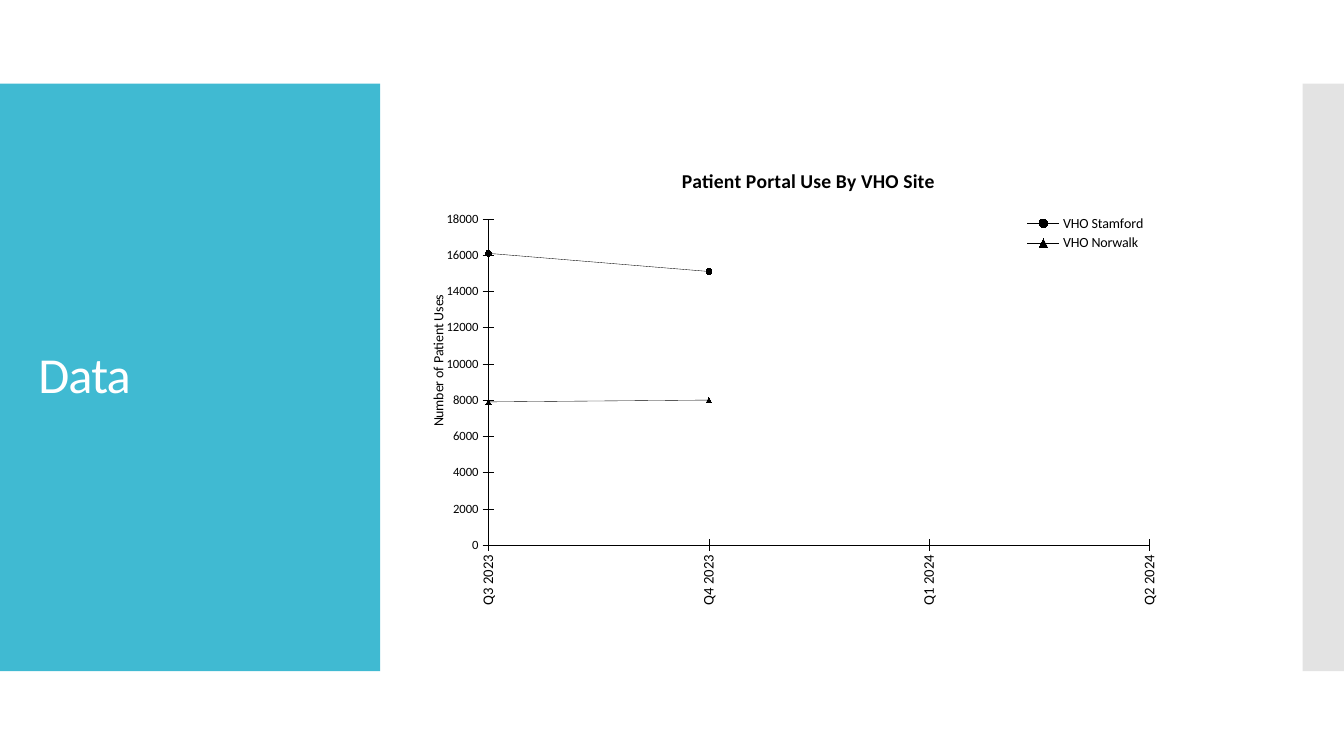
"""Build the patient portal data slide."""
from dataclasses import dataclass

from lxml.etree import SubElement
from pptx import Presentation
from pptx.chart.axis import CategoryAxis, ValueAxis
from pptx.chart.chart import Chart
from pptx.chart.data import CategoryChartData
from pptx.chart.series import LineSeries
from pptx.dml.color import RGBColor
from pptx.dml.line import LineFormat
from pptx.enum.chart import XL_CHART_TYPE, XL_LEGEND_POSITION, XL_MARKER_STYLE, XL_TICK_MARK
from pptx.enum.shapes import MSO_SHAPE
from pptx.enum.text import MSO_ANCHOR, PP_ALIGN
from pptx.oxml import parse_xml
from pptx.oxml.ns import nsdecls, qn
from pptx.oxml.xmlchemy import BaseOxmlElement
from pptx.slide import Slide
from pptx.text.text import Font
from pptx.util import Inches, Pt

FONT = "Calibri"
COLORS = {"panel": "40BAD2", "strip": "C8C8C8", "ink": "000000", "paper": "FFFFFF"}
QUARTERS = ("Q3 2023", "Q4 2023", "Q1 2024", "Q2 2024")


@dataclass(frozen=True)
class Band:
    """A colour band at the side of the slide."""
    left: float
    width: float
    color: str
    opacity: int = 100


@dataclass(frozen=True)
class Site:
    """One health centre and its quarterly uses."""
    name: str
    uses: tuple[int | None, ...]
    marker: XL_MARKER_STYLE


BANDS = (Band(0, 3.77, "panel"), Band(12.92, 0.42, "strip", 50))
SITES = (
    Site("VHO Stamford", (16100, 15100, None, None), XL_MARKER_STYLE.CIRCLE),
    Site("VHO Norwalk", (7900, 8000, None, None), XL_MARKER_STYLE.TRIANGLE),
)


def rgb(name: str) -> RGBColor:
    """Look up a named colour."""
    return RGBColor.from_string(COLORS[name])


def style_font(font: Font, size: float, color: str = "ink", bold: bool = False) -> None:
    """Apply the slide's typeface."""
    font.name, font.size, font.bold = FONT, Pt(size), bold
    font.color.rgb = rgb(color)


def style_line(line: LineFormat) -> None:
    """Apply the chart's hairline."""
    line.color.rgb = rgb("ink")
    line.width = Pt(0.25)


def place(part: BaseOxmlElement, index: int, target: str = "", **percents: float) -> None:
    """Give a chart part a manual layout in percent of the chart."""
    for old in part.findall(qn("c:layout")):
        part.remove(old)
    layout = parse_xml(f"<c:layout {nsdecls('c')}><c:manualLayout/></c:layout>")
    if target:
        SubElement(layout[0], qn("c:layoutTarget"), val=target)
    for mode in ("xMode", "yMode"):
        SubElement(layout[0], qn(f"c:{mode}"), val="edge")
    for tag, percent in percents.items():
        SubElement(layout[0], qn(f"c:{tag}"), val=f"{percent / 100:.3f}")
    part.insert(index, layout)


def add_band(slide: Slide, band: Band) -> None:
    """Draw one side band."""
    shape = slide.shapes.add_shape(
        MSO_SHAPE.RECTANGLE, Inches(band.left), Inches(0.83), Inches(band.width), Inches(5.83))
    shape.shadow.inherit = False
    shape.line.fill.background()
    shape.fill.solid()
    shape.fill.fore_color.rgb = rgb(band.color)
    if band.opacity < 100:
        tint = shape.element.find(".//" + qn("a:srgbClr"))
        SubElement(tint, qn("a:alpha"), val=str(band.opacity * 1000))


def format_title(slide: Slide) -> None:
    """Set the heading on the left panel."""
    heading = slide.shapes.title
    heading.left, heading.top = Inches(0.28), Inches(1.23)
    heading.width, heading.height = Inches(3.22), Inches(5.03)
    heading.text_frame.text = "Data"
    heading.text_frame.word_wrap = True
    heading.text_frame.vertical_anchor = MSO_ANCHOR.MIDDLE
    paragraph = heading.text_frame.paragraphs[0]
    paragraph.alignment = PP_ALIGN.LEFT
    paragraph.line_spacing = 0.9
    style_font(paragraph.runs[0].font, 36, "paper")
    paragraph.runs[0].font._element.set("spc", "-60")
    heading.element.getparent().append(heading.element)


def format_axis(axis: CategoryAxis | ValueAxis, size: float) -> None:
    """Apply the settings that both axes share."""
    axis.has_major_gridlines = False
    axis.major_tick_mark = XL_TICK_MARK.CROSS
    axis.minor_tick_mark = XL_TICK_MARK.NONE
    style_font(axis.tick_labels.font, size)
    style_line(axis.format.line)


def format_axes(chart: Chart) -> None:
    """Set quarters upright and uses from zero to 18000."""
    quarters, uses = chart.category_axis, chart.value_axis
    format_axis(quarters, 10.5)
    format_axis(uses, 9)
    body = quarters._element.find(qn("c:txPr")).find(qn("a:bodyPr"))
    body.set("rot", "-5400000")
    body.set("vert", "horz")
    uses.minimum_scale, uses.maximum_scale, uses.major_unit = 0, 18000, 2000
    uses.tick_labels.number_format = "0"
    uses.tick_labels.number_format_is_linked = False
    for crossing in uses._element.findall(qn("c:crossBetween")):
        uses._element.remove(crossing)
    uses._element.find(qn("c:crosses")).addnext(
        parse_xml(f'<c:crossBetween {nsdecls("c")} val="midCat"/>'))
    caption = uses.axis_title
    caption.text_frame.text = "Number of Patient Uses"
    style_font(caption.text_frame.paragraphs[0].runs[0].font, 10)
    place(caption.element, 1, x=0, y=31.5)


def format_series(series: LineSeries, site: Site) -> None:
    """Style the line and markers of one site."""
    series.smooth = False
    style_line(series.format.line)
    series.marker.style, series.marker.size = site.marker, 4
    series.marker.format.fill.solid()
    series.marker.format.fill.fore_color.rgb = rgb("ink")
    style_line(series.marker.format.line)


def add_usage_chart(slide: Slide) -> None:
    """Add the chart of portal use by site."""
    data = CategoryChartData(number_format="0")
    data.categories = QUARTERS
    for site in SITES:
        data.add_series(site.name, site.uses)
    chart = slide.shapes.add_chart(
        XL_CHART_TYPE.LINE_MARKERS, Inches(4.23), Inches(1.46), Inches(7.41), Inches(4.57), data).chart
    style_font(chart.font, 9)
    chart.plots[0].vary_by_categories = False
    for series, site in zip(chart.plots[0].series, SITES):
        format_series(series, site)
    format_axes(chart)

    chart.has_title = True
    chart.chart_title.text_frame.text = "Patient Portal Use By VHO Site"
    style_font(chart.chart_title.text_frame.paragraphs[0].runs[0].font, 14, bold=True)
    place(chart.chart_title.element, 1, x=33.7, y=3.5)

    chart.has_legend = True
    chart.legend.position = XL_LEGEND_POSITION.RIGHT
    chart.legend.include_in_layout = False
    style_font(chart.legend.font, 10)
    place(chart.legend._element, 1, x=79.7, y=14, w=17, h=9.4)

    graph = chart._chartSpace.find(qn("c:chart"))
    place(graph.find(qn("c:plotArea")), 0, "inner", x=8.3, y=15.6, w=88.5, h=70.8)
    graph.addnext(parse_xml(
        f'<c:spPr {nsdecls("c", "a")}><a:solidFill><a:srgbClr val="{COLORS["paper"]}"/>'
        "</a:solidFill><a:ln><a:noFill/></a:ln></c:spPr>"))


def main() -> None:
    """Create and save the presentation."""
    deck = Presentation()
    deck.slide_width, deck.slide_height = Inches(13.33), Inches(7.5)
    slide = deck.slides.add_slide(deck.slide_layouts[5])
    for band in BANDS:
        add_band(slide, band)
    format_title(slide)
    add_usage_chart(slide)
    deck.save("out.pptx")


if __name__ == "__main__":
    main()
